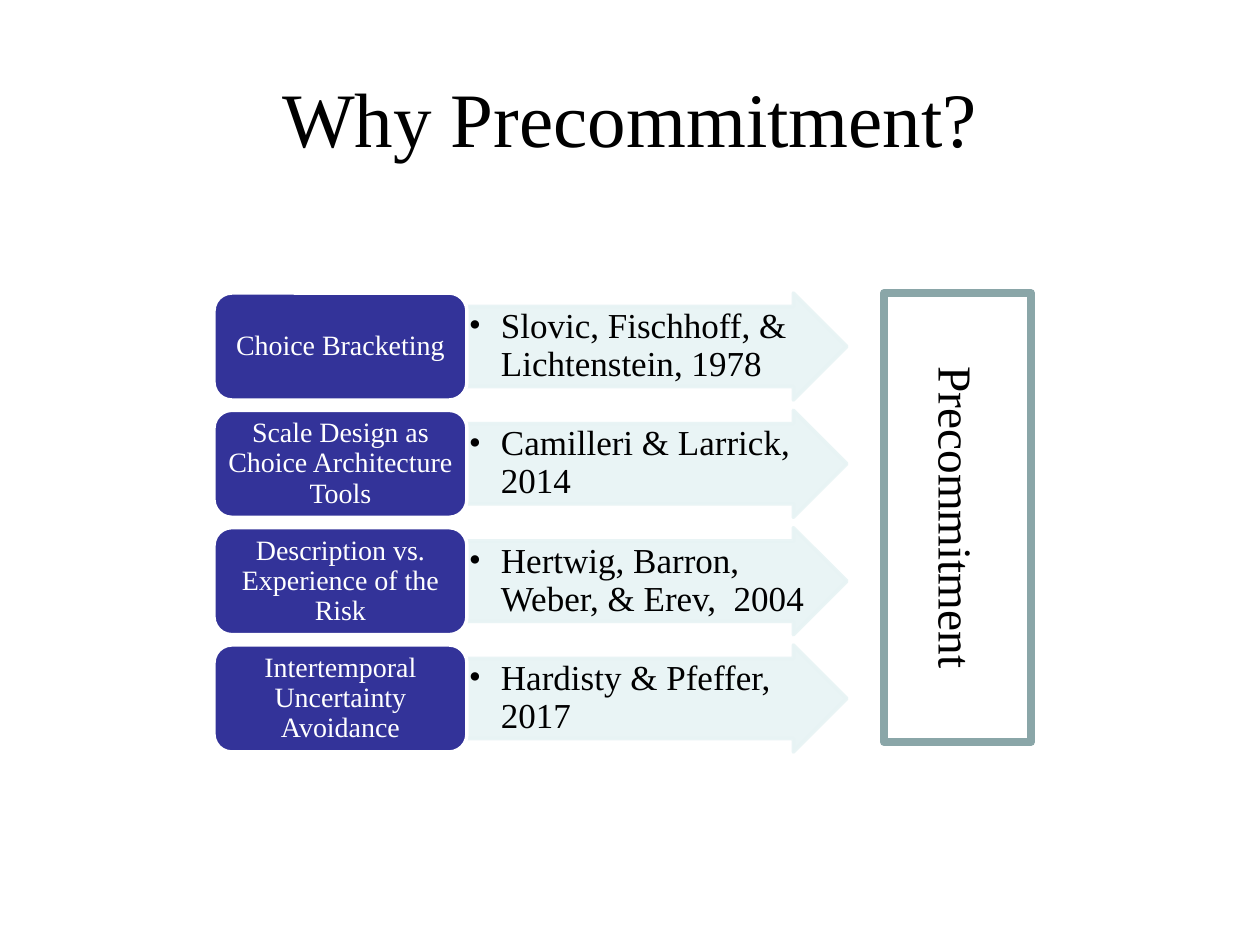
"""Build the slide "Why Precommitment?" with four reasons, their sources and a closing bar."""
import pptx
import pptx.dml.color
import pptx.enum.shapes
import pptx.enum.text
import pptx.oxml
import pptx.oxml.ns
import pptx.util

TITLE = "Why Precommitment?"
REASONS = [
    ("Choice Bracketing", "Slovic, Fischhoff, & Lichtenstein, 1978"),
    ("Scale Design as Choice Architecture Tools", "Camilleri & Larrick, 2014"),
    ("Description vs. Experience of the Risk", "Hertwig, Barron, Weber, & Erev,  2004"),
    ("Intertemporal Uncertainty Avoidance", "Hardisty & Pfeffer, 2017"),
]
OUTCOME = "Precommitment"

COLORS = {
    "black": "000000",
    "white": "FFFFFF",
    "reason": "333399",
    "source": "E7F3F4",
    "outcome": "8AA6A8",
}
FONT = "Times New Roman"
SLIDE = (1260, 945)
TITLE_BOX = (63, 38, 1134, 157)
OUTCOME_BOX = (884, 293, 147, 449)
FIRST_TOP, LAST_TOP, ROW_HEIGHT = 293, 645, 107
REASON_LEFT, REASON_WIDTH = 214, 253
SOURCE_LEFT, SOURCE_WIDTH = REASON_LEFT + REASON_WIDTH, 380
INDENT = 32

SHAPES = pptx.enum.shapes.MSO_SHAPE
ALIGN = pptx.enum.text.PP_ALIGN
ANCHOR = pptx.enum.text.MSO_ANCHOR


def px(length):
    return pptx.util.Emu(round(length * 914400 / 126))


def rgb(name):
    return pptx.dml.color.RGBColor.from_string(COLORS[name])


def add_box(slide, preset, box, fill, line, line_width):
    shape = slide.shapes.add_shape(preset, *map(px, box))
    shape.shadow.inherit = False
    if fill:
        shape.fill.solid()
        shape.fill.fore_color.rgb = rgb(fill)
    else:
        shape.fill.background()
    shape.line.color.rgb = rgb(line)
    shape.line.width = pptx.util.Pt(line_width)
    return shape


def write(shape, text, size, color="black", align=ALIGN.CENTER, anchor=ANCHOR.MIDDLE, insets=None):
    frame = shape.text_frame
    frame.word_wrap = True
    frame.vertical_anchor = anchor
    if insets:
        frame.margin_left, frame.margin_top, frame.margin_right, frame.margin_bottom = map(px, insets)
    paragraph = frame.paragraphs[0]
    paragraph.text = text
    paragraph.alignment = align
    paragraph.font.name = FONT
    paragraph.font.size = pptx.util.Pt(size)
    paragraph.font.color.rgb = rgb(color)
    return paragraph


def set_alpha(shape, percent):
    for color in shape.element.iter(pptx.oxml.ns.qn("a:srgbClr")):
        alpha = pptx.oxml.parse_xml(f'<a:alpha {pptx.oxml.ns.nsdecls("a")} val="{percent * 1000}"/>')
        color.append(alpha)


def add_bullet(paragraph):
    paragraph.level = 1
    properties = paragraph._p.get_or_add_pPr()
    properties.set("marL", str(px(INDENT)))
    properties.set("indent", str(-px(INDENT)))
    font_properties = properties.find(pptx.oxml.ns.qn("a:defRPr"))
    for tag in (f'buFont typeface="{FONT}"', 'buChar char="•"'):
        font_properties.addprevious(pptx.oxml.parse_xml(f'<a:{tag} {pptx.oxml.ns.nsdecls("a")}/>'))


def add_row(slide, top, reason, source):
    arrow = add_box(slide, SHAPES.RIGHT_ARROW, (SOURCE_LEFT, top, SOURCE_WIDTH, ROW_HEIGHT), "source", "source", 2)
    arrow.adjustments[0] = 0.75
    arrow.adjustments[1] = 0.5
    set_alpha(arrow, 90)
    citation = write(arrow, source, 20, align=ALIGN.LEFT, anchor=ANCHOR.TOP, insets=(2, 2, 1, 1))
    citation.line_spacing = 0.9
    add_bullet(citation)

    label = add_box(slide, SHAPES.ROUNDED_RECTANGLE, (REASON_LEFT, top, REASON_WIDTH, ROW_HEIGHT), "reason", "white", 2)
    write(label, reason, 16, "white", insets=(9, 4, 9, 4)).line_spacing = 0.9


def main():
    deck = pptx.Presentation()
    deck.slide_width, deck.slide_height = map(px, SLIDE)
    slide = deck.slides.add_slide(deck.slide_layouts[6])

    write(slide.shapes.add_textbox(*map(px, TITLE_BOX)), TITLE, 44)

    pitch = (LAST_TOP - FIRST_TOP) / (len(REASONS) - 1)
    for row, (reason, source) in enumerate(REASONS):
        add_row(slide, FIRST_TOP + row * pitch, reason, source)

    outcome = add_box(slide, SHAPES.RECTANGLE, OUTCOME_BOX, None, "outcome", 4.5)
    write(outcome, OUTCOME, 27)
    outcome.text_frame._txBody.bodyPr.set("vert", "vert")

    deck.save("out.pptx")


if __name__ == "__main__":
    main()
